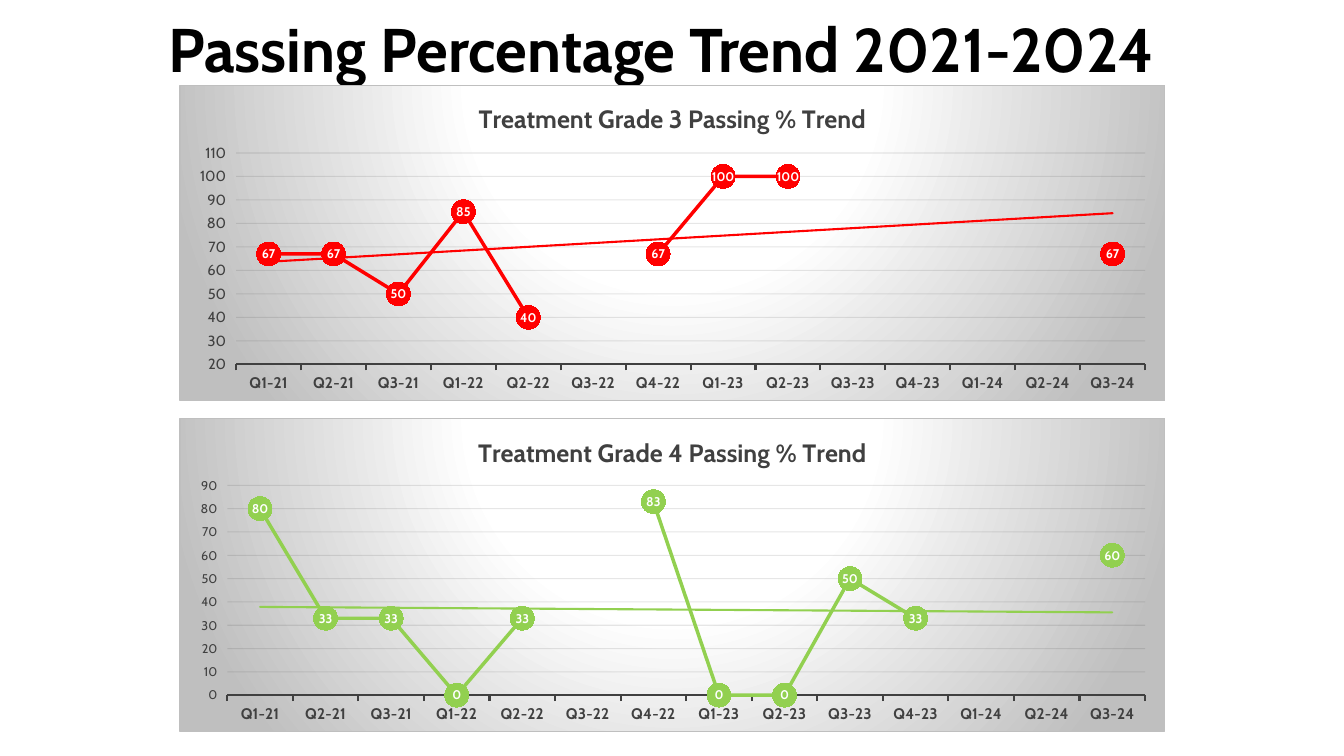
from dataclasses import dataclass

from pptx import Presentation
from pptx.chart.data import CategoryChartData
from pptx.dml.color import RGBColor as RGB
from pptx.enum.chart import XL_CHART_TYPE as CT, XL_LABEL_POSITION as LP
from pptx.enum.chart import XL_MARKER_STYLE as MS, XL_TICK_MARK as TM
from pptx.enum.text import MSO_ANCHOR as ANCHOR, MSO_AUTO_SIZE as FIT, PP_ALIGN as ALIGN
from pptx.oxml import parse_xml
from pptx.oxml.ns import nsdecls, qn
from pptx.util import Pt


@dataclass(frozen=True)
class Theme:
    font: str = "Cabin"
    black: str = "000000"
    dark: str = "404040"
    grid: str = "0D0D0D"
    white: str = "FFFFFF"
    gray: str = "BFBFBF"
    red: str = "FF0000"
    green: str = "92D050"
    title: float = 44
    chart_title: float = 18
    category: float = 11
    base: float = 10
    label: float = 9


NS = nsdecls("c", "a")
QUARTERS = ["Q1-21", "Q2-21", "Q3-21", "Q1-22", "Q2-22", "Q3-22", "Q4-22",
            "Q1-23", "Q2-23", "Q3-23", "Q4-23", "Q1-24", "Q2-24", "Q3-24"]


class TrendSlide:
    def __init__(self, s, theme):
        self.s, self.theme = s, theme

    def style(self, font, size, color, bold=False):
        font.name, font.size, font.bold = self.theme.font, Pt(size), bold
        font.color.rgb = RGB.from_string(color)

    def line(self, line, color, width):
        line.color.rgb = RGB.from_string(color)
        line.width = Pt(width)

    def title(self, text, x, y, w, h):
        sp = self.s.shapes.title
        sp.left, sp.top, sp.width, sp.height = Pt(x), Pt(y), Pt(w), Pt(h)
        tf = sp.text_frame
        tf.vertical_anchor, tf.auto_size, tf.word_wrap = ANCHOR.BOTTOM, FIT.NONE, True
        p = tf.paragraphs[0]
        p.alignment, p.line_spacing = ALIGN.CENTER, 0.9
        r = p.add_run()
        r.text = text
        self.style(r.font, self.theme.title, self.theme.black, True)

    def trend_chart(self, title, values, color, box, plot_box, scale, value_size):
        """Add a line chart with a trend line; scale is (minimum, maximum)."""
        t = self.theme
        data = CategoryChartData()
        data.categories = QUARTERS
        data.add_series("Series 1", values)
        chart = self.s.shapes.add_chart(
            CT.LINE_MARKERS, *[Pt(v) for v in box], data).chart
        self.style(chart.font, t.base, t.black)
        chart.has_legend = False
        chart.has_title = True
        chart.chart_title.include_in_layout = False
        r = chart.chart_title.text_frame.paragraphs[0].add_run()
        r.text = title
        self.style(r.font, t.chart_title, t.dark, True)
        self.axes(chart, scale, value_size)
        self.series(chart.plots[0], color)
        self.background(chart)
        self.plot_layout(chart, plot_box)

    def axes(self, chart, scale, value_size):
        t = self.theme
        cat, val = chart.category_axis, chart.value_axis
        self.style(cat.tick_labels.font, t.category, t.dark, True)
        self.line(cat.format.line, t.dark, 1.5)
        cat.major_tick_mark = TM.OUTSIDE
        self.style(val.tick_labels.font, value_size, t.dark)
        val.format.line.fill.background()
        val.major_tick_mark = TM.OUTSIDE
        val.minimum_scale, val.maximum_scale = scale
        val.major_unit = 10
        val.has_major_gridlines = True
        self.line(val.major_gridlines.format.line, t.grid, 0.75)
        grid = val._element.find(qn("c:majorGridlines"))
        grid.find(".//" + qn("a:srgbClr")).append(
            parse_xml(f'<a:alpha {NS} val="10000"/>'))

    def series(self, plot, color):
        t = self.theme
        plot.vary_by_categories = False
        ser = plot.series[0]
        ser.smooth = False
        self.line(ser.format.line, color, 2.5)
        ser.marker.style, ser.marker.size = MS.CIRCLE, 17
        ser.marker.format.fill.solid()
        ser.marker.format.fill.fore_color.rgb = RGB.from_string(color)
        ser.marker.format.line.fill.background()
        labels = ser.data_labels
        labels.show_value, labels.position = True, LP.CENTER
        self.style(labels.font, t.label, t.white, True)
        ser._element.find(qn("c:cat")).addprevious(parse_xml(
            f'<c:trendline {NS}><c:spPr><a:ln w="{Pt(1.5)}" cap="rnd"><a:solidFill>'
            f'<a:srgbClr val="{color}"/></a:solidFill></a:ln></c:spPr>'
            '<c:trendlineType val="linear"/><c:dispRSqr val="0"/><c:dispEq val="0"/>'
            '</c:trendline>'))

    def background(self, chart):
        """Give the chart area its radial gradient and square border."""
        t = self.theme
        stops = "".join(
            f'<a:gs pos="{pos * 1000}"><a:srgbClr val="{color}"/></a:gs>'
            for pos, color in ((0, t.white), (39, t.white), (100, t.gray)))
        space = chart._chartSpace
        space.find(qn("c:chart")).addnext(parse_xml(
            f'<c:spPr {NS}><a:gradFill><a:gsLst>{stops}</a:gsLst><a:path path="circle">'
            '<a:fillToRect l="50000" t="-80000" r="50000" b="180000"/></a:path></a:gradFill>'
            f'<a:ln w="{Pt(0.75)}"><a:solidFill><a:srgbClr val="{t.gray}"/></a:solidFill>'
            '</a:ln></c:spPr>'))
        space.find(qn("c:date1904")).addnext(
            parse_xml(f'<c:roundedCorners {NS} val="0"/>'))

    def plot_layout(self, chart, plot_box):
        area = chart._chartSpace.find(".//" + qn("c:plotArea"))
        for old in area.findall(qn("c:layout")):
            area.remove(old)
        sizes = "".join(f'<c:{k} val="{v}"/>' for k, v in zip("xywh", plot_box))
        area.insert(0, parse_xml(
            f'<c:layout {NS}><c:manualLayout><c:layoutTarget val="inner"/>'
            f'<c:xMode val="edge"/><c:yMode val="edge"/>{sizes}'
            '</c:manualLayout></c:layout>'))


def main():
    prs = Presentation()
    prs.slide_width, prs.slide_height = Pt(960), Pt(540)
    s = prs.slides.add_slide(prs.slide_layouts[0])
    subtitle = s.placeholders[1].element
    subtitle.getparent().remove(subtitle)

    theme = Theme()
    page = TrendSlide(s, theme)
    page.title("Passing Percentage Trend 2021-2024", 50.4, -14.4, 844.6, 79.2)
    left, width = 128.2, 704.2
    page.trend_chart(
        "Treatment Grade 3 Passing % Trend",
        [67, 67, 50, 85, 40, None, 67, 100, 100, None, None, None, None, 67],
        theme.red, (left, 60.5, width, 226.1), (0.057, 0.215, 0.923, 0.67),
        (20, 110), 10.5)
    page.trend_chart(
        "Treatment Grade 4 Passing % Trend",
        [80, 33, 33, 0, 33, None, 83, 0, 0, 50, 33, None, None, 60],
        theme.green, (left, 298.8, width, 223.9), (0.048, 0.213, 0.932, 0.672),
        (0, 90), 9)
    prs.save("out.pptx")


if __name__ == "__main__":
    main()
